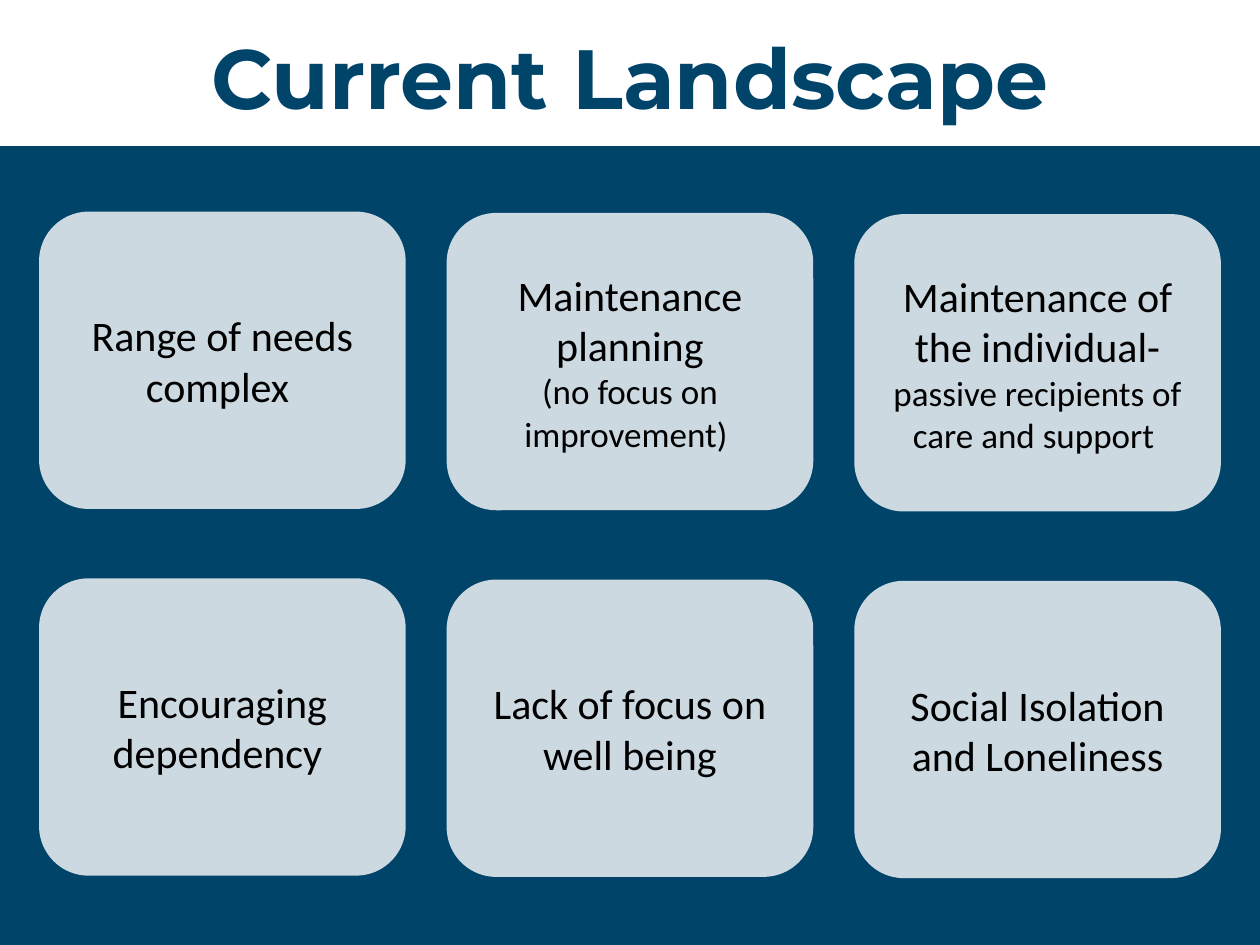
from dataclasses import dataclass

from lxml.etree import SubElement
from pptx import Presentation
from pptx.dml.color import RGBColor
from pptx.enum.shapes import MSO_SHAPE as Preset
from pptx.enum.text import MSO_ANCHOR as Anchor, MSO_AUTO_SIZE as AutoSize, PP_ALIGN as Align
from pptx.oxml.ns import qn
from pptx.util import Inches, Pt


@dataclass(frozen=True)
class Theme:
    navy: RGBColor = RGBColor(0x00, 0x44, 0x6A)
    white: RGBColor = RGBColor(0xFF, 0xFF, 0xFF)
    black: RGBColor = RGBColor(0x00, 0x00, 0x00)
    heading_font: str = "Montserrat"
    body_font: str = "Calibri"
    heading_size: int = 48
    large: int = 24
    small: int = 20
    card_opacity: int = 80


THEME = Theme()
WIDTH, HEIGHT = 10, 7.5
HEADER_HEIGHT = 1.16

# Each card is a list of paragraphs, each a list of (text, size) runs
CARDS = [
    [
        [[("Range of needs complex ", THEME.large)]],
        [[("Maintenance planning", THEME.large)],
         [("(no focus on improvement) ", THEME.small)]],
        [[("Maintenance of the individual- ", THEME.large),
          ("passive recipients of care and support ", THEME.small)]],
    ],
    [
        [[("Encouraging dependency ", THEME.large)]],
        [[("Lack of focus on well being", THEME.large)]],
        [[("Social Isolation and Loneliness", THEME.large)]],
    ],
]


def apply(target, values):
    for attribute, value in values.items():
        setattr(target, attribute, value)


def place(part, box):
    apply(part, dict(zip(("left", "top", "width", "height"), map(Inches, box))))


def add_panel(slide, preset, box, color, opacity=100):
    panel = slide.shapes.add_shape(preset, *map(Inches, box))
    panel.shadow.inherit = False
    panel.line.fill.background()
    panel.fill.solid()
    panel.fill.fore_color.rgb = color
    if opacity < 100:
        tint = panel.fill._xPr.find(qn("a:solidFill"))[0]
        SubElement(tint, qn("a:alpha"), val=str(opacity * 1000))
    return panel


def add_header(slide, box):
    left, top, width, height = box
    heading = slide.shapes.title
    place(heading, (left + 0.35, top + 0.2, width - 0.7, height - 0.35))
    heading.text = "Current Landscape"
    frame = heading.text_frame
    apply(frame, {"margin_left": 0, "margin_right": 0, "margin_top": 0, "margin_bottom": 0,
                  "vertical_anchor": Anchor.TOP, "word_wrap": True,
                  "auto_size": AutoSize.NONE})
    line = frame.paragraphs[0]
    line.alignment = Align.CENTER
    apply(line.font, {"name": THEME.heading_font, "size": Pt(THEME.heading_size), "bold": True})
    line.font.color.rgb = THEME.navy


def add_card(slide, box, paragraphs):
    card = add_panel(slide, Preset.ROUNDED_RECTANGLE, box, THEME.white, THEME.card_opacity)
    frame = card.text_frame
    apply(frame, {"word_wrap": True, "vertical_anchor": Anchor.MIDDLE})
    for index, runs in enumerate(paragraphs):
        line = frame.add_paragraph() if index else frame.paragraphs[0]
        line.alignment = Align.CENTER
        for text, size in runs:
            run = line.add_run()
            run.text = text
            apply(run.font, {"name": THEME.body_font, "size": Pt(size)})
            run.font.color.rgb = THEME.black


def add_card_grid(slide, box):
    left, top, width, height = box
    add_panel(slide, Preset.RECTANGLE, box, THEME.navy)
    margin_x, margin_y = 0.31, 0.52
    card_width, card_height = 2.91, 2.36
    pitch_x = (width - 2 * margin_x - card_width) / (len(CARDS[0]) - 1)
    pitch_y = 2.91
    column_drop = 0.01  # each column sits slightly lower than the one before
    for row, cards in enumerate(CARDS):
        for column, paragraphs in enumerate(cards):
            add_card(slide, (left + margin_x + column * pitch_x,
                             top + margin_y + row * pitch_y + column * column_drop,
                             card_width, card_height), paragraphs)


def main():
    deck = Presentation()
    apply(deck, {"slide_width": Inches(WIDTH), "slide_height": Inches(HEIGHT)})
    slide = deck.slides.add_slide(deck.slide_layouts[5])  # title only
    slide.background.fill.solid()
    slide.background.fill.fore_color.rgb = THEME.white
    add_header(slide, (0, 0, WIDTH, HEADER_HEIGHT))
    add_card_grid(slide, (0, HEADER_HEIGHT, WIDTH, HEIGHT - HEADER_HEIGHT))
    deck.save("out.pptx")


if __name__ == "__main__":
    main()
